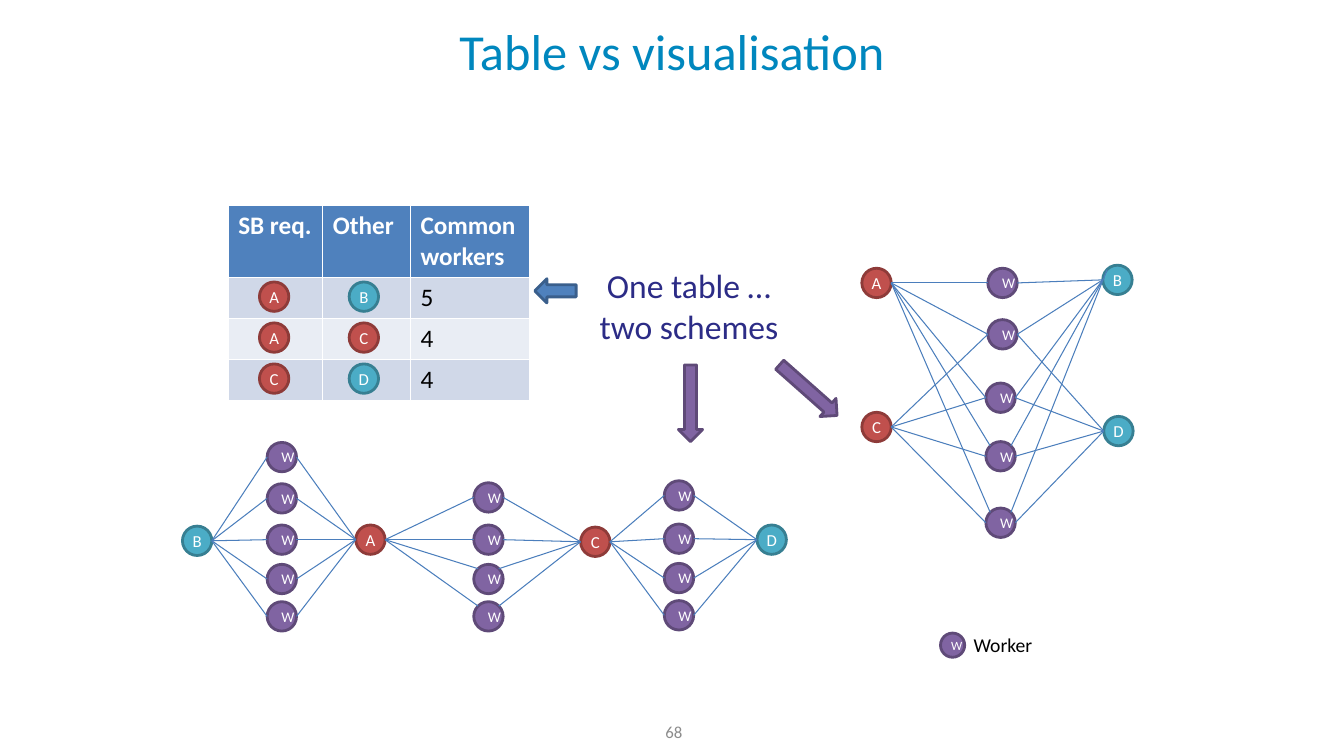
from pptx import Presentation
from pptx.dml.color import RGBColor
from pptx.enum.shapes import MSO_CONNECTOR, MSO_SHAPE
from pptx.enum.text import MSO_ANCHOR, PP_ALIGN
from pptx.oxml.ns import qn
from pptx.util import Pt
from lxml import etree

FONT = "Calibri"
NODE = 21
RED, TEAL, PURPLE, BLUE = "C0504D", "4BACC6", "8064A2", "4F81BD"
OUTLINE = {RED: "8E3B39", TEAL: "377F92", PURPLE: "5F4A78", BLUE: "3A5F8C"}
HUB_FILL = {"A": RED, "C": RED, "B": TEAL, "D": TEAL}
PORTS = {"left": (0, .5), "right": (1, .5),
         "upper left": (.15, .15), "upper right": (.85, .15)}


def rgb(value):
    return RGBColor.from_string(value)


def write(tf, text, size, color, align=PP_ALIGN.CENTER, bold=False):
    tf.text = text
    for p in tf.paragraphs:
        p.alignment = align
        for r in p.runs:
            r.font.name, r.font.size, r.font.bold = FONT, Pt(size), bold
            r.font.color.rgb = rgb(color)


def add_filled(shapes, kind, x, y, w, h, fill):
    sp = shapes.add_shape(kind, Pt(x), Pt(y), Pt(w), Pt(h))
    sp.shadow.inherit = False
    sp.fill.solid()
    sp.fill.fore_color.rgb = rgb(fill)
    sp.line.color.rgb = rgb(OUTLINE[fill])
    sp.line.width = Pt(2)
    return sp


def add_hub(shapes, name, x, y):
    sp = add_filled(shapes, MSO_SHAPE.OVAL, x, y, NODE, NODE, HUB_FILL[name])
    tf = sp.text_frame
    tf.margin_left = tf.margin_right = tf.margin_top = tf.margin_bottom = 0
    tf.vertical_anchor = MSO_ANCHOR.MIDDLE
    write(tf, name, 12, "FFFFFF")
    return sp


def add_worker(shapes, x, y, size=NODE, font_size=10.5):
    sp = add_filled(shapes, MSO_SHAPE.OVAL, x, y, size, size, PURPLE)
    sp.text_frame.vertical_anchor = MSO_ANCHOR.MIDDLE
    write(sp.text_frame, "W", font_size, "FFFFFF")
    return sp


def port(sp, side):
    fx, fy = PORTS[side]
    return int(sp.left + fx * sp.width), int(sp.top + fy * sp.height)


def link(shapes, start, end, start_side="right", end_side="left"):
    line = shapes.add_connector(MSO_CONNECTOR.STRAIGHT,
                                *port(start, start_side), *port(end, end_side))
    line.line.color.rgb = rgb("4B7EBC")
    line.line.width = Pt(0.75)
    etree.SubElement(line._element.spPr, qn("a:effectLst"))


def add_text(shapes, text, x, y, w, h, size, color, align=PP_ALIGN.CENTER, wrap=True):
    tf = shapes.add_textbox(Pt(x), Pt(y), Pt(w), Pt(h)).text_frame
    tf.word_wrap = wrap
    write(tf, text, size, color, align)
    return tf


def add_title(slide, x, y, w, h):
    sp = slide.shapes.title
    sp.left, sp.top, sp.width, sp.height = Pt(x), Pt(y), Pt(w), Pt(h)
    sp.text_frame.vertical_anchor = MSO_ANCHOR.MIDDLE
    write(sp.text_frame, "Table vs visualisation", 36, "0087BE")


def add_pairs_table(slide, x, y, w, h):
    header_h = 50.4
    row_h = (h - header_h) / 3
    pairs = [("A", "B", "5"), ("A", "C", "4"), ("C", "D", "4")]
    table = slide.shapes.add_table(4, 3, Pt(x), Pt(y), Pt(w), Pt(h)).table
    for col, share in zip(table.columns, (0.314, 0.291, 0.395)):
        col.width = Pt(w * share)
    for i, row in enumerate(table.rows):
        row.height = Pt(row_h if i else header_h)
        for cell in row.cells:
            cell.fill.solid()
            cell.fill.fore_color.rgb = rgb(
                BLUE if i == 0 else "D0D8E8" if i % 2 else "E9EDF4")
    for j, heading in enumerate(("SB req.", "Other", "Common workers")):
        write(table.cell(0, j).text_frame, heading, 18, "FFFFFF", PP_ALIGN.LEFT, True)
    # Hubs sit on top of the first two columns
    for i, (request, other, count) in enumerate(pairs):
        write(table.cell(i + 1, 2).text_frame, count, 18, "000000", PP_ALIGN.LEFT)
        node_y = y + header_h + i * row_h + 4
        add_hub(slide.shapes, request, x + 22.3, node_y)
        add_hub(slide.shapes, other, x + 86.4, node_y)


def add_chain_scheme(slide, x, y):
    shapes = slide.shapes.add_group_shape().shapes
    hubs = [add_hub(shapes, name, x + dx, y + dy) for name, dx, dy in
            (("B", 0, 59.8), ("A", 123.8, 59), ("C", 284.4, 60.5), ("D", 410.4, 59))]
    worker_columns = [(60.5, (0, 29.5, 59, 87.1, 113.8)),
                      (208.1, (28.8, 59, 87.1, 113.8)),
                      (344.2, (27.4, 58.3, 86.4, 113))]
    for i, (dx, tops) in enumerate(worker_columns):
        for j, dy in enumerate(tops):
            worker = add_worker(shapes, x + dx, y + dy)
            # The two lower workers of the middle column join at their upper corners
            upper = "upper " if i == 1 and j >= 2 else ""
            link(shapes, hubs[i], worker, end_side=upper + "left")
            link(shapes, worker, hubs[i + 1], start_side=upper + "right")


def add_layer_scheme(slide, x, y):
    shapes = slide.shapes.add_group_shape().shapes
    a, c, b, d = (add_hub(shapes, name, x + dx, y + dy) for name, dx, dy in
                  (("A", 0, 2.2), ("C", 0, 105.1), ("B", 172.1, 0), ("D", 172.8, 108)))
    spots = [(90, 2.2), (90, 38.9), (88.6, 84.2), (88.6, 126), (88.6, 173.5)]
    for i, (dx, dy) in enumerate(spots):
        worker = add_worker(shapes, x + dx, y + dy)
        upper = "upper " if i >= 3 else ""
        link(shapes, a, worker, end_side=upper + "left")
        link(shapes, worker, b, upper + "right", "upper left" if i == 4 else "left")
        # The first worker is shared by A and B only
        if i:
            link(shapes, c, worker)
            link(shapes, worker, d)


def add_callout(slide, x, y, w, h):
    shapes = slide.shapes.add_group_shape().shapes
    add_text(shapes, "One table …\ntwo schemes", x, y, w, h, 24, "2C2C86", wrap=False)
    for dx, dy, length, angle, fill in ((-32.4, 7.2, 29.5, 90, BLUE),
                                        (64.1, 74.9, 54.7, 0, PURPLE),
                                        (148.3, 65.5, 54.7, 311.5, PURPLE)):
        arrow = add_filled(shapes, MSO_SHAPE.DOWN_ARROW, x + dx, y + dy, 17.3, length, fill)
        arrow.rotation = angle


def add_legend(slide, x, y):
    add_worker(slide.shapes, x, y, 17.3, 9)
    add_text(slide.shapes, "Worker", x + 16.5, y - 3.6, 57, 24.5, 14, "000000",
             PP_ALIGN.LEFT, wrap=False)


def add_page_number(slide, x, y, w, h):
    tf = add_text(slide.shapes, "68", x, y, w, h, 12, "8C8C8C")
    tf.vertical_anchor = MSO_ANCHOR.MIDDLE


def main():
    prs = Presentation()
    prs.slide_width, prs.slide_height = Pt(960), Pt(540)
    slide = prs.slides.add_slide(prs.slide_layouts[5])
    add_title(slide, 15, 0, 930, 71.3)
    add_chain_scheme(slide, 130.3, 316)
    add_layer_scheme(slide, 615.6, 189.4)
    add_pairs_table(slide, 163, 147, 215.3, 138.2)
    add_legend(slide, 671.8, 452.2)
    add_callout(slide, 420.5, 185.8, 143.3, 65.5)
    add_page_number(slide, 369.4, 508.3, 224, 28.8)
    prs.save("out.pptx")


if __name__ == "__main__":
    main()
